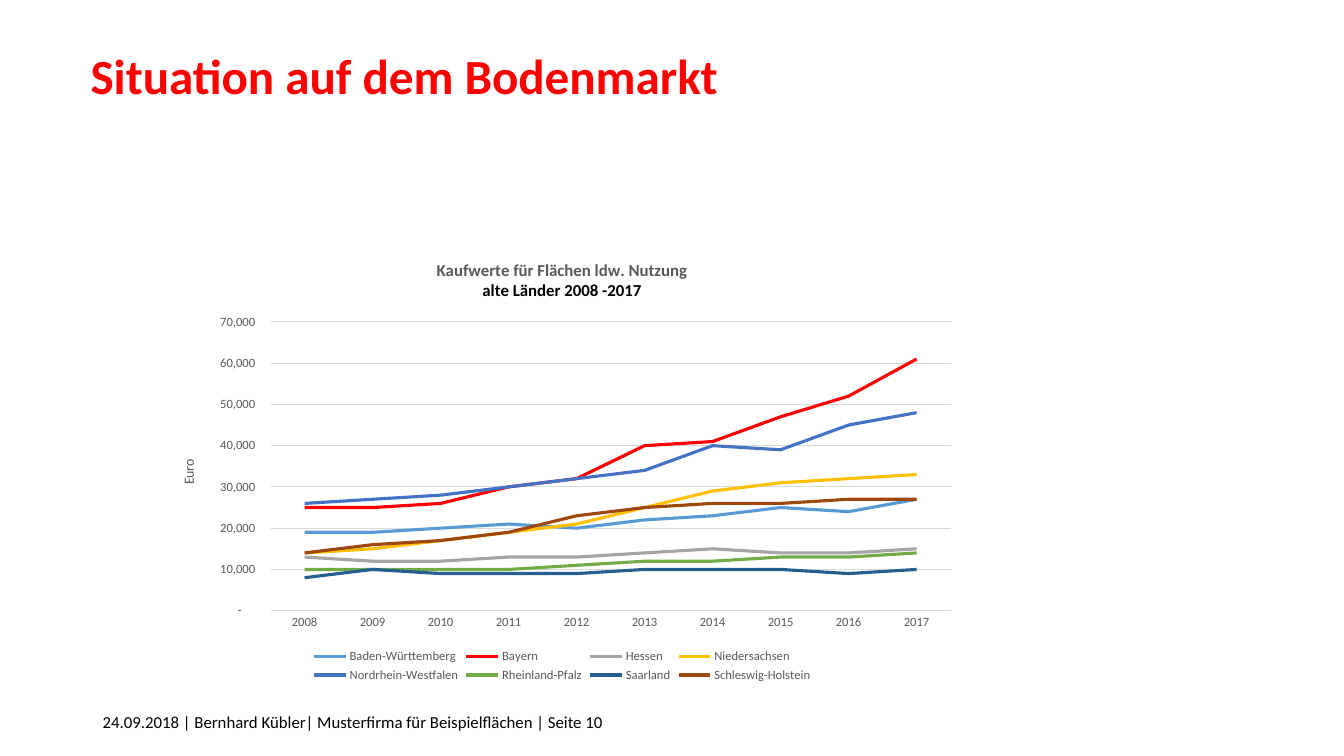
import pptx
import pptx.chart.data
import pptx.dml.color
import pptx.enum.chart
import pptx.enum.text
import pptx.oxml
import pptx.oxml.ns
import pptx.util

Inches = pptx.util.Inches
Pt = pptx.util.Pt
RGBColor = pptx.dml.color.RGBColor

BLACK = RGBColor(0x00, 0x00, 0x00)
RED = RGBColor(0xFF, 0x00, 0x00)
GRAY = RGBColor(0x59, 0x59, 0x59)
LIGHT_GRAY = RGBColor(0xD9, 0xD9, 0xD9)
BLUE = RGBColor(0x5B, 0x9B, 0xD5)
SILVER = RGBColor(0xA5, 0xA5, 0xA5)
GOLD = RGBColor(0xFF, 0xC0, 0x00)
ROYAL_BLUE = RGBColor(0x44, 0x72, 0xC4)
GREEN = RGBColor(0x70, 0xAD, 0x47)
NAVY = RGBColor(0x25, 0x5E, 0x91)
BROWN = RGBColor(0x9E, 0x48, 0x0E)

NUMBER_FORMAT = r'_-* #,##0\ _€_-;\-* #,##0\ _€_-;_-* "-"??\ _€_-;_-@_-'

# Purchase values in thousand euros per state
YEARS = [str(year) for year in range(2008, 2018)]
STATES = [
    ("Baden-Württemberg", BLUE, [19, 19, 20, 21, 20, 22, 23, 25, 24, 27]),
    ("Bayern", RED, [25, 25, 26, 30, 32, 40, 41, 47, 52, 61]),
    ("Hessen", SILVER, [13, 12, 12, 13, 13, 14, 15, 14, 14, 15]),
    ("Niedersachsen", GOLD, [14, 15, 17, 19, 21, 25, 29, 31, 32, 33]),
    ("Nordrhein-Westfalen", ROYAL_BLUE, [26, 27, 28, 30, 32, 34, 40, 39, 45, 48]),
    ("Rheinland-Pfalz", GREEN, [10, 10, 10, 10, 11, 12, 12, 13, 13, 14]),
    ("Saarland", NAVY, [8, 10, 9, 9, 9, 10, 10, 10, 9, 10]),
    ("Schleswig-Holstein", BROWN, [14, 16, 17, 19, 23, 25, 26, 26, 27, 27]),
]


class SlideBuilder:
    """Holds the text style and the current slide."""

    font_name = "Calibri"

    def __init__(self, slide):
        self.slide = slide

    def style_font(self, font, size, color, bold=False):
        font.name = self.font_name
        font.size = Pt(size)
        font.bold = bold
        font.color.rgb = color

    def add_text(self, text, left, top, width, height, size, color,
                 bold=False, anchor=pptx.enum.text.MSO_ANCHOR.TOP, spacing=1.0):
        box = self.slide.shapes.add_textbox(
            Inches(left), Inches(top), Inches(width), Inches(height))
        frame = box.text_frame
        frame.word_wrap = True
        frame.vertical_anchor = anchor
        paragraph = frame.paragraphs[0]
        paragraph.text = text
        paragraph.line_spacing = spacing
        self.style_font(paragraph.font, size, color, bold)

    def add_line_chart(self, left, top, width, height, categories, series_rows):
        data = pptx.chart.data.CategoryChartData(number_format="#,##0")
        data.categories = categories
        for name, _, thousands in series_rows:
            data.add_series(name, [value * 1000 for value in thousands])
        chart = self.slide.shapes.add_chart(
            pptx.enum.chart.XL_CHART_TYPE.LINE, Inches(left), Inches(top),
            Inches(width), Inches(height), data).chart
        self.style_font(chart.font, 10, BLACK)
        chart.plots[0].vary_by_categories = False
        for series, (_, color, _) in zip(chart.plots[0].series, series_rows):
            series.smooth = False
            series.marker.style = pptx.enum.chart.XL_MARKER_STYLE.NONE
            series.format.line.color.rgb = color
            series.format.line.width = Pt(2.25)
        chart.has_legend = True
        chart.legend.position = pptx.enum.chart.XL_LEGEND_POSITION.BOTTOM
        chart.legend.include_in_layout = False
        self.style_font(chart.legend.font, 9, GRAY)
        return chart

    def style_axis(self, axis):
        axis.major_tick_mark = pptx.enum.chart.XL_TICK_MARK.NONE
        axis.minor_tick_mark = pptx.enum.chart.XL_TICK_MARK.NONE
        self.style_font(axis.tick_labels.font, 9, GRAY)

    def style_rule(self, line):
        line.color.rgb = LIGHT_GRAY
        line.width = Pt(0.75)

    def add_title(self, owner, lines, size, bold=False):
        """Title a chart or an axis with (text, color) lines."""
        owner.has_title = True
        title = owner.chart_title if hasattr(owner, "chart_title") else owner.axis_title
        frame = title.text_frame
        for index, (text, color) in enumerate(lines):
            paragraph = frame.add_paragraph() if index else frame.paragraphs[0]
            paragraph.text = text
            self.style_font(paragraph.runs[0].font, size, color, bold)

    def place_plot(self, chart, x, y, w, h):
        """Fix the inner plot area, in fractions of the chart."""
        plot_area = chart._chartSpace.chart.plotArea
        for old_layout in plot_area.findall(pptx.oxml.ns.qn("c:layout")):
            plot_area.remove(old_layout)
        sizes = "".join(f'<c:{tag} val="{value}"/>' for tag, value in
                        (("x", x), ("y", y), ("w", w), ("h", h)))
        plot_area.insert(0, pptx.oxml.parse_xml(
            f'<c:layout {pptx.oxml.ns.nsdecls("c")}><c:manualLayout>'
            '<c:layoutTarget val="inner"/><c:xMode val="edge"/>'
            f'<c:yMode val="edge"/>{sizes}</c:manualLayout></c:layout>'))


def main():
    presentation = pptx.Presentation()
    presentation.slide_width = Inches(13.33)
    presentation.slide_height = Inches(7.5)
    builder = SlideBuilder(presentation.slides.add_slide(presentation.slide_layouts[6]))

    # Footer and heading
    builder.add_text(
        "24.09.2018 | Bernhard Kübler| Musterfirma für Beispielflächen | Seite 10",
        0.92, 7.01, 6.46, 0.4, 12, BLACK)
    builder.add_text("Situation auf dem Bodenmarkt", 0.8, 0.43, 11.5, 0.69, 35.1, RED,
                     bold=True, anchor=pptx.enum.text.MSO_ANCHOR.MIDDLE, spacing=0.9)

    # Land price chart
    chart = builder.add_line_chart(1.56, 2.4, 8.03, 4.41, YEARS, STATES)
    builder.add_title(chart, [("Kaufwerte für Flächen ldw. Nutzung", GRAY),
                              ("alte Länder 2008 -2017", BLACK)], 12, bold=True)
    builder.place_plot(chart, 0.14, 0.18, 0.84, 0.65)

    # Axes
    builder.style_axis(chart.category_axis)
    builder.style_rule(chart.category_axis.format.line)
    value_axis = chart.value_axis
    builder.style_axis(value_axis)
    builder.add_title(value_axis, [("Euro", GRAY)], 10)
    builder.style_rule(value_axis.major_gridlines.format.line)
    value_axis.format.line.fill.background()
    value_axis.minimum_scale = 0
    value_axis.maximum_scale = 70000
    value_axis.major_unit = 10000
    value_axis.tick_labels.number_format = NUMBER_FORMAT
    value_axis.tick_labels.number_format_is_linked = False

    presentation.save("out.pptx")


if __name__ == "__main__":
    main()
